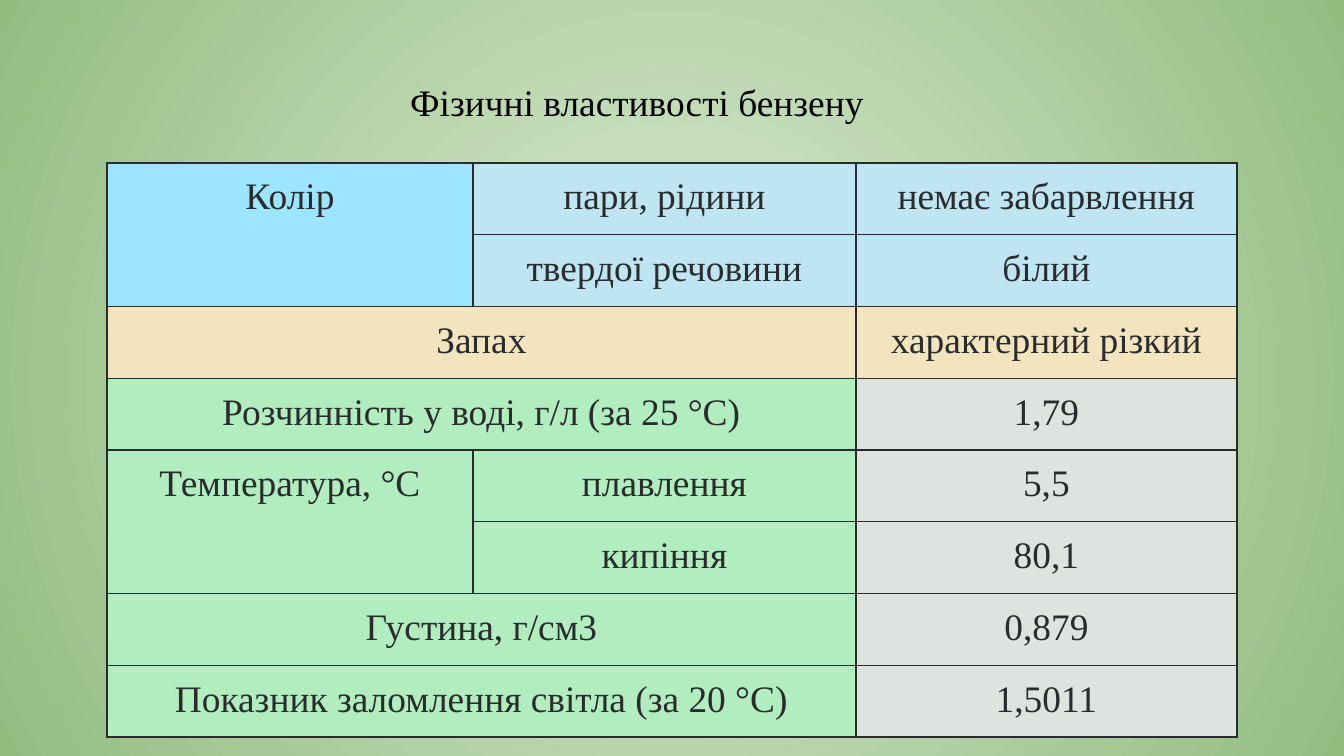
"""Build a slide with a table of the physical properties of benzene."""
from lxml import etree
from pptx import Presentation
from pptx import util as u
from pptx.dml.color import RGBColor
from pptx.enum import text
from pptx.oxml import ns

PX = 914400 / 134.4
FONT = "Times New Roman"
INK = "292B2C"
SKY, PALE_BLUE, SAND, GREEN, GREY = "9CE4FF", "BFE4F2", "F2E4BF", "B2EDBF", "DEE3DF"


def px(length):
    return u.Emu(round(length * PX))


def style(paragraph, color):
    paragraph.font.name = FONT
    paragraph.font.size = u.Pt(20)
    paragraph.font.bold = False
    paragraph.font.color.rgb = RGBColor.from_string(color)


presentation = Presentation()
presentation.slide_width, presentation.slide_height = px(1344), px(756)
slide = presentation.slides.add_slide(presentation.slide_layouts[6])

background = slide.background.fill
background.gradient()
for stop, color in zip(background.gradient_stops, ("DCECD5", "93BC81")):
    stop.color.rgb = RGBColor.from_string(color)
gradient = slide.element.find(".//" + ns.qn("a:gradFill"))
gradient.remove(gradient.find(ns.qn("a:lin")))
circle = etree.SubElement(gradient, ns.qn("a:path"), path="circle")
etree.SubElement(circle, ns.qn("a:fillToRect"), l="50000", t="50000", r="50000", b="50000")

title = slide.shapes.add_textbox(px(397), px(66), px(586), px(85)).text_frame
title.word_wrap = True
title.margin_left = title.margin_right = title.margin_top = title.margin_bottom = u.Inches(0.1)
title.text = "Фізичні властивості бензену"
style(title.paragraphs[0], "000000")

rows = [
    (("Колір", SKY), ("пари, рідини", PALE_BLUE), ("немає забарвлення", PALE_BLUE)),
    (("", SKY), ("твердої речовини", PALE_BLUE), ("білий", PALE_BLUE)),
    (("Запах", SAND), ("", SAND), ("характерний різкий", SAND)),
    (("Розчинність у воді, г/л (за 25 °С)", GREEN), ("", GREEN), ("1,79", GREY)),
    (("Температура, °С", GREEN), ("плавлення", GREEN), ("5,5", GREY)),
    (("", GREEN), ("кипіння", GREEN), ("80,1", GREY)),
    (("Густина, г/см3", GREEN), ("", GREEN), ("0,879", GREY)),
    (("Показник заломлення світла (за 20 °С)", GREEN), ("", GREEN), ("1,5011", GREY)),
]
widths = (366, 383, 381)
row_height = 68
table = slide.shapes.add_table(
    len(rows), len(widths), px(107), px(163), px(sum(widths)), px(row_height * len(rows))
).table
table.first_row = table.horz_banding = False
for column, width in zip(table.columns, widths):
    column.width = px(width)

for row_index, row in enumerate(rows):
    table.rows[row_index].height = px(row_height)
    for column_index, (label, color) in enumerate(row):
        cell = table.cell(row_index, column_index)
        cell.margin_left = cell.margin_right = u.Inches(0.1)
        cell.margin_top = cell.margin_bottom = u.Inches(0.1)
        cell.text = label
        paragraph = cell.text_frame.paragraphs[0]
        paragraph.alignment = text.PP_ALIGN.CENTER
        style(paragraph, INK)
        properties = cell._tc.get_or_add_tcPr()
        for side in ("a:lnL", "a:lnR", "a:lnT", "a:lnB"):
            border = etree.SubElement(properties, ns.qn(side), w=str(u.Pt(0.75)))
            border_fill = etree.SubElement(border, ns.qn("a:solidFill"))
            etree.SubElement(border_fill, ns.qn("a:srgbClr"), val=INK)
        cell.fill.solid()
        cell.fill.fore_color.rgb = RGBColor.from_string(color)

for row_index in (0, 4):
    table.cell(row_index, 0).merge(table.cell(row_index + 1, 0))
for row_index in (2, 3, 6, 7):
    table.cell(row_index, 0).merge(table.cell(row_index, 1))

presentation.save("out.pptx")
